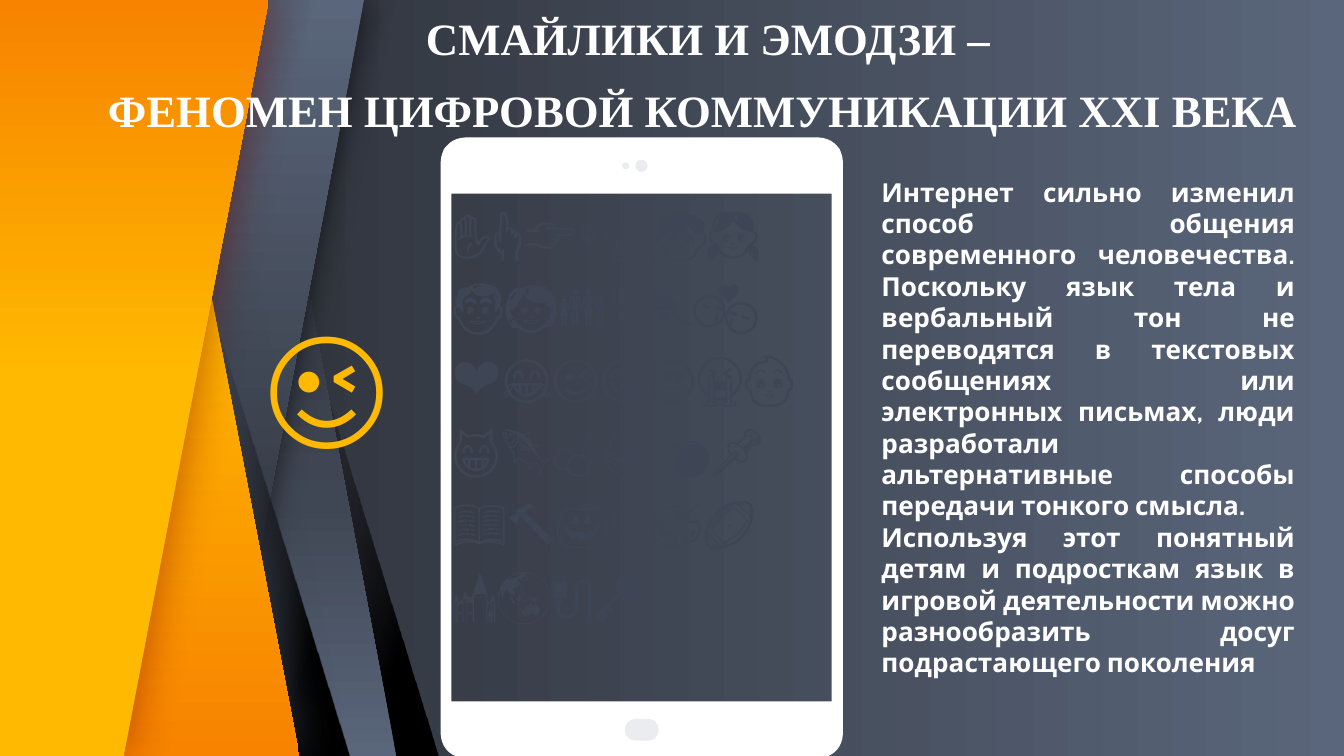
from math import cos, radians, sin

from lxml import etree
from pptx import Presentation
from pptx import util as u
from pptx.dml import color as c
from pptx.enum import shapes as s, text as t
from pptx.oxml import ns

Cm = u.Cm
HEX = {
    "slate": "5A667B", "steel": "404754", "dusk": "3E4655", "night": "26282D",
    "ink": "27252C", "black": "000000", "gold": "FFB900", "fire": "F78300",
    "wine": "7E0808", "white": "FFFFFF", "pale": "EAECF0",
}
WIDE, HIGH = 25.4, 14.29


def tint(node, tone, alpha):
    """Add a colour with its opacity in percent."""
    rgb = etree.SubElement(node, ns.qn("a:srgbClr"), val=HEX[tone])
    etree.SubElement(rgb, ns.qn("a:alpha"), val=str(alpha * 1000))


def paint(shape, stops, angle=0, glow=None):
    """Fill with one colour or a gradient; glow is colour, opacity, blur."""
    shape.line.fill.background()
    shape.shadow.inherit = False
    if isinstance(stops, str):
        shape.fill.solid()
        shape.fill.fore_color.rgb = c.RGBColor.from_string(HEX[stops])
    else:
        shape.fill.gradient()
        shape.fill.gradient_angle = 360 - angle
        ramp = shape._element.spPr.find(".//" + ns.qn("a:gsLst"))
        for old in list(ramp):
            ramp.remove(old)
        for pos, tone, alpha in stops:
            stop = etree.SubElement(ramp, ns.qn("a:gs"), pos=str(pos * 1000))
            tint(stop, tone, alpha)
    if glow:
        tone, alpha, blur = glow
        list_ = shape._element.spPr.find(ns.qn("a:effectLst"))
        cast = etree.SubElement(list_, ns.qn("a:outerShdw"),
                                blurRad=str(u.Pt(blur)), dist="0", dir="0",
                                algn="ctr", rotWithShape="0")
        tint(cast, tone, alpha)


deck = Presentation()
deck.slide_width, deck.slide_height = Cm(WIDE), Cm(HIGH)
slide = deck.slides.add_slide(deck.slide_layouts[6])
tree = slide.shapes

# Background
back = slide.background.fill
back.gradient()
back.gradient_angle = 180
for stop, tone in zip(back.gradient_stops, ("slate", "night")):
    stop.color.rgb = c.RGBColor.from_string(HEX[tone])

# Folded bands: slanted shades, strips and orange panels, back to front
dark = [(0, "black", 100), (13, "black", 100), (55, "ink", 0), (100, "ink", 0)]
soft = [(0, "dusk", 100), (13, "dusk", 100), (56, "ink", 0), (100, "ink", 0)]
low = [(0, "slate", 100), (33, "steel", 100), (100, "night", 100)]
top = [(0, "slate", 100), (100, "night", 100)]
warm = [(0, "gold", 100), (37, "gold", 100), (100, "fire", 100)]
hot = [(0, "gold", 100), (50, "gold", 100), (100, "fire", 100)]
bands = [
    (2.44, 0.753, True, dark, 342, None),
    (1.65, 0.463, True, low, 270, None),
    (1.65, 0.753, False, soft, 18, None),
    (1.04, 0.463, False, top, 90, ("black", 63, 16.9)),
    (0.76, 0.753, True, dark, 342, None),
    ((5.66, 2.92), None, None, warm, 90, ("dusk", 71, 24.8)),
    (0.08, 0.753, False, soft, 18, None),
    ((2.34, 5.08), None, None, hot, 270, ("wine", 50, 24.8)),
]
for left, slant, flip, stops, angle, glow in bands:
    if slant is None:
        foot, head = left
        pen = tree.build_freeform(0, 0, scale=Cm(0.01))
        pen.add_line_segments([(0, HIGH * 100), (foot * 100, HIGH * 100),
                               (head * 100, 0)])
        band = pen.convert_to_shape()
    else:
        band = tree.add_shape(s.MSO_SHAPE.PARALLELOGRAM,
                              Cm(left), 0, Cm(5.84), Cm(HIGH))
        band.adjustments[0] = slant
        if flip:
            band._element.spPr.find(ns.qn("a:xfrm")).set("flipH", "1")
    paint(band, stops, angle, glow)

# Tablet case: rounded outline with an open screen, in hundredths of a cm
x1, y1, x2, y2, rad = 833, 260, 1593, 1433, 45
hubs = [(x2 - rad, y2 - rad, 0), (x1 + rad, y2 - rad, 90),
        (x1 + rad, y1 + rad, 180), (x2 - rad, y1 + rad, 270)]
edge = [(x + rad * cos(radians(turn + step)), y + rad * sin(radians(turn + step)))
        for x, y, turn in hubs for step in range(0, 91, 10)]
pen = tree.build_freeform(*edge[0], scale=Cm(0.01))
pen.add_line_segments(edge[1:])
pen.move_to(853, 366)
pen.add_line_segments([(853, 1326), (1572, 1326), (1572, 366)])
paint(pen.convert_to_shape(), "white")

# Tablet button and lenses
for kind, left, high, wide, tall in [
    (s.MSO_SHAPE.ROUNDED_RECTANGLE, 11.81, 13.59, 0.64, 0.41),
    (s.MSO_SHAPE.OVAL, 11.76, 3.07, 0.13, 0.13),
    (s.MSO_SHAPE.OVAL, 12.01, 3.02, 0.23, 0.23),
]:
    part = tree.add_shape(kind, Cm(left), Cm(high), Cm(wide), Cm(tall))
    if kind == s.MSO_SHAPE.ROUNDED_RECTANGLE:
        part.adjustments[0] = 0.5
    paint(part, "pale")

# Texts: box, insets, anchor, autosize, alignment, spacing, type, paragraphs
mid, just, left = t.PP_ALIGN.CENTER, t.PP_ALIGN.JUSTIFY, t.PP_ALIGN.LEFT
grow, none = t.MSO_AUTO_SIZE.SHAPE_TO_FIT_TEXT, t.MSO_AUTO_SIZE.NONE
high, core = t.MSO_ANCHOR.TOP, t.MSO_ANCHOR.MIDDLE
texts = [
    ((1.02, 0, 24.51, 2.67), (0.25, 0.13), high, grow, mid, 1.07, 8,
     ("Times New Roman", 24, True, "white"),
     [" СМАЙЛИКИ И ЭМОДЗИ –",
      "ФЕНОМЕН ЦИФРОВОЙ КОММУНИКАЦИИ XXI ВЕКА"]),
    ((16.41, 3.2, 8.31, 9.83), (0.25, 0.13), high, grow, just, 1.0, 0,
     ("Cabin", 14, True, "white"),
     ["Интернет сильно изменил способ общения современного человечества. "
      "Поскольку язык тела и вербальный тон не переводятся в текстовых "
      "сообщениях или электронных письмах, люди разработали альтернативные "
      "способы передачи тонкого смысла.",
      "Используя этот понятный детям и подросткам язык в игровой деятельности "
      "можно разнообразить досуг подрастающего поколения"]),
    ((4.52, 5.33, 3.33, 3.61), (0.25, 0.25), core, none, mid, 1.0, 0,
     ("Arial", 72, False, "gold"), ["😉"]),
    ((8.56, 3.61, 7.47, 8.48), (0, 0), high, none, left, 1.15, 0,
     ("Cabin", 28, False, "dusk"),
     ["✋👆👉👍👤👦👧👨👩👪💃🏃💑❤😂😉😋😒😭👶😸🐟🍒🍔💣📌📖🔨🎃🎈🎨🏈🏰🌏🔌🔑"]),
]
for spot, pad, hold, fit, align, space, after, face, lines in texts:
    frame = tree.add_textbox(*map(Cm, spot)).text_frame
    frame.word_wrap = True
    frame.auto_size = fit
    frame.vertical_anchor = hold
    frame.margin_left = frame.margin_right = Cm(pad[0])
    frame.margin_top = frame.margin_bottom = Cm(pad[1])
    for i, line in enumerate(lines):
        para = frame.add_paragraph() if i else frame.paragraphs[0]
        para.alignment = align
        para.line_spacing = space
        para.space_after = u.Pt(after)
        run = para.add_run()
        run.text = line
        font = run.font
        font.name, size, font.bold, tone = face
        font.size = u.Pt(size)
        font.color.rgb = c.RGBColor.from_string(HEX[tone])

deck.save("out.pptx")
